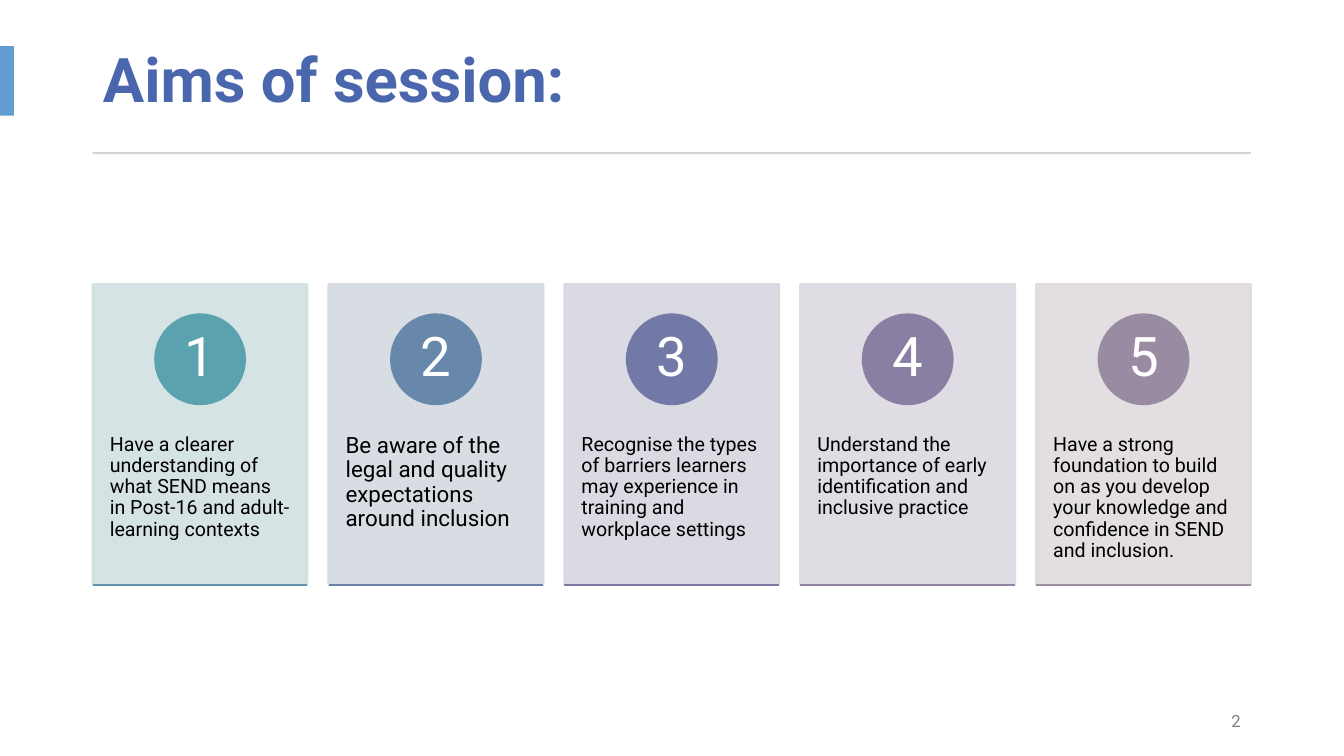
from lxml import etree
from pptx import Presentation
from pptx.dml.color import RGBColor
from pptx.enum.shapes import MSO_CONNECTOR, MSO_SHAPE
from pptx.enum.text import MSO_ANCHOR, MSO_AUTO_SIZE, PP_ALIGN
from pptx.oxml.ns import qn
from pptx.util import Pt

FONT = "Roboto"
LEFT, CONTENT_WIDTH = 66.24, 827.28
CARD_TOP, CARD_WIDTH, CARD_HEIGHT = 203, 153.4, 214.6
CARD_STEP = (CONTENT_WIDTH - CARD_WIDTH) / 4
CIRCLE_TOP, CIRCLE_SIZE = 224.6, 64.1
AIM_TOP, AIM_HEIGHT = 284.4, 128.9

AIMS = [
    ("Have a clearer understanding of what SEND means in Post-16 and adult-learning contexts",
     14, "D2E0E3", "5AA2AE", "6193AC"),
    ("Be aware of the legal and quality expectations around inclusion",
     16, "D4DAE2", "6788AA", "6D7FA8"),
    ("Recognise the types of barriers learners may experience in training and workplace settings",
     14, "D7D7E1", "7379A6", "7C79A5"),
    ("Understand the importance of early identification and inclusive practice",
     14, "DCD9E0", "887FA3", "9285A2"),
    ("Have a strong foundation to build on as you develop your knowledge and confidence "
     "in SEND and inclusion.",
     14, "DFDBDF", "998BA1", "9D90A0"),
]


def color(hex_value):
    """Turn a hex string into a colour."""
    return RGBColor.from_string(hex_value)


def set_text(shape, text, size, hex_value, align=PP_ALIGN.LEFT, anchor=MSO_ANCHOR.TOP,
             insets=(7.2, 3.6), spacing=0.9, bold=False):
    """Write one formatted paragraph into a shape."""
    frame = shape.text_frame
    frame.text = text
    frame.word_wrap = True
    frame.auto_size = MSO_AUTO_SIZE.NONE
    frame.vertical_anchor = anchor
    frame.margin_left = frame.margin_right = Pt(insets[0])
    frame.margin_top = frame.margin_bottom = Pt(insets[1])
    para = frame.paragraphs[0]
    para.alignment = align
    para.line_spacing = spacing
    para.space_before = Pt(0)
    font = para.runs[0].font
    font.name, font.size, font.bold = FONT, Pt(size), bold
    font.color.rgb = color(hex_value)


def add_filled(slide, kind, left, top, width, height, hex_value, outlined=False):
    """Add a flat shape in one colour."""
    shape = slide.shapes.add_shape(kind, Pt(left), Pt(top), Pt(width), Pt(height))
    shape.shadow.inherit = False
    shape.fill.solid()
    shape.fill.fore_color.rgb = color(hex_value)
    if outlined:
        shape.line.color.rgb = color(hex_value)
        shape.line.width = Pt(1.5)
    else:
        shape.line.fill.background()
    return shape


def set_opacity(shape, percent):
    """Make the fill and line of a shape partly transparent."""
    for element in shape.element.spPr.iter(qn("a:srgbClr")):
        etree.SubElement(element, qn("a:alpha")).set("val", str(percent * 1000))


def add_line(slide, left, top, width, hex_value):
    """Add a horizontal line."""
    line = slide.shapes.add_connector(
        MSO_CONNECTOR.STRAIGHT, Pt(left), Pt(top), Pt(left + width), Pt(top))
    line.line.color.rgb = color(hex_value)
    line.line.width = Pt(1.5)
    etree.SubElement(line.element.spPr, qn("a:effectLst"))


def add_text(slide, left, top, width, height, text, size, hex_value, **options):
    """Add a text box."""
    box = slide.shapes.add_textbox(Pt(left), Pt(top), Pt(width), Pt(height))
    set_text(box, text, size, hex_value, **options)


def add_title(slide, text):
    """Place and format the title."""
    title = slide.shapes.title
    title.left, title.top = Pt(LEFT), Pt(19.4)
    title.width, title.height = Pt(CONTENT_WIDTH), Pt(79.2)
    set_text(title, text, 44, "4A66AC", anchor=MSO_ANCHOR.MIDDLE, bold=True)


def add_card(slide, index, text, size, card_color, circle_color, line_color):
    """Add one numbered aim."""
    left = LEFT + index * CARD_STEP
    card = add_filled(slide, MSO_SHAPE.RECTANGLE, left, CARD_TOP, CARD_WIDTH, CARD_HEIGHT,
                      card_color, outlined=True)
    set_opacity(card, 90)
    add_text(slide, left, AIM_TOP, CARD_WIDTH, AIM_HEIGHT, text, size, "000000",
             insets=(12.2, 25.9))
    circle = add_filled(slide, MSO_SHAPE.OVAL, left + (CARD_WIDTH - CIRCLE_SIZE) / 2,
                        CIRCLE_TOP, CIRCLE_SIZE, CIRCLE_SIZE, circle_color, outlined=True)
    set_text(circle, str(index + 1), 39, "FFFFFF", align=PP_ALIGN.CENTER,
             anchor=MSO_ANCHOR.MIDDLE, insets=(5, 0.7))
    add_line(slide, left, CARD_TOP + CARD_HEIGHT, CARD_WIDTH, line_color)


def main():
    """Build the slide and save it."""
    deck = Presentation()
    deck.slide_width, deck.slide_height = Pt(960), Pt(540)
    slide = deck.slides.add_slide(deck.slide_layouts[5])
    add_title(slide, "Aims of session:")
    add_filled(slide, MSO_SHAPE.RECTANGLE, 0, 33, 10, 49.7, "629DD1")
    add_filled(slide, MSO_SHAPE.RECTANGLE, LEFT, 108.7, CONTENT_WIDTH, 1.44, "D5D5D5")
    add_text(slide, 697.7, 500.4, 195.8, 28.8, "2", 12, "808080",
             align=PP_ALIGN.RIGHT, anchor=MSO_ANCHOR.MIDDLE, spacing=1.0)
    for index, aim in enumerate(AIMS):
        add_card(slide, index, *aim)
    deck.save("out.pptx")


if __name__ == "__main__":
    main()
